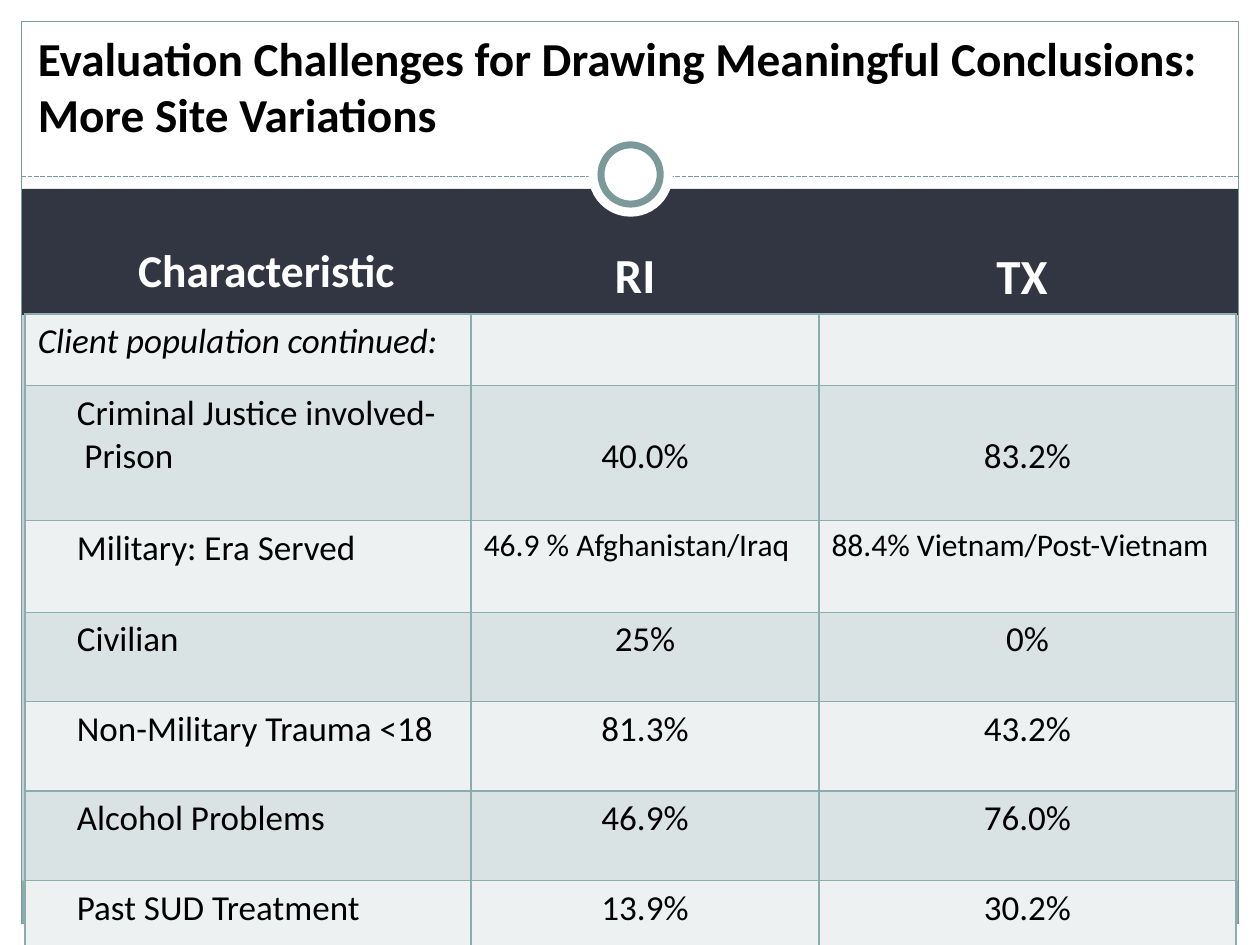
from lxml.etree import SubElement
from pptx import Presentation
from pptx.dml.color import RGBColor
from pptx.enum.dml import MSO_LINE
from pptx.enum.shapes import MSO_CONNECTOR, MSO_SHAPE
from pptx.enum.text import MSO_ANCHOR, MSO_AUTO_SIZE, PP_ALIGN
from pptx.oxml import parse_xml
from pptx.oxml.ns import nsdecls, qn
from pptx.util import Inches, Pt

COLUMNS, ROWS = 100, 75
WHITE, BLACK, DARK = "FFFFFF", "000000", "323643"
SAGE, TEAL, MIST = "7C999A", "8CADAE", "C5D1D7"
BANDS = ("EEF1F2", "DAE3E3")
COLUMN_WIDTHS = (35.4, 27.6, 33.1)
ROW_HEIGHTS = (5.7, 10.7, 7.3, 7.1, 7.1, 7.1, 7.1)
TABLE_ROWS = (
    ("Client population continued:", "", ""),
    ("Criminal Justice involved-\nPrison", "40.0%", "83.2%"),
    ("Military: Era Served", "46.9 % Afghanistan/Iraq", "88.4% Vietnam/Post-Vietnam"),
    ("Civilian", "25%", "0%"),
    ("Non-Military Trauma <18", "81.3%", "43.2%"),
    ("Alcohol Problems", "46.9%", "76.0%"),
    ("Past SUD Treatment", "13.9%", "30.2%"),
)


def grid(units):
    return Inches(units / 10)


def color(value):
    return RGBColor.from_string(value)


def place(sp, box):
    sp.left, sp.top, sp.width, sp.height = map(grid, box)


def add_text(tf, text, size, fill=BLACK, bold=False, italic=False,
             align=PP_ALIGN.LEFT, before=0, indents=(0,)):
    for i, line in enumerate(text.split("\n")):
        p = tf.paragraphs[0] if i == 0 else tf.add_paragraph()
        p.alignment, p.space_before, p.line_spacing = align, Pt(before), 1.0
        if indents[i]:
            p._p.get_or_add_pPr().set("marL", str(Inches(indents[i])))
        r = p.add_run()
        r.text = line
        r.font.name, r.font.size = "Calibri", Pt(size)
        r.font.bold, r.font.italic = bold, italic
        r.font.color.rgb = color(fill)


def add_panel(s, box, fill=None, line=None, weight=0.75, kind=MSO_SHAPE.RECTANGLE):
    sp = s.shapes.add_shape(kind, *map(grid, box))
    sp.shadow.inherit = False
    if fill:
        sp.fill.solid()
        sp.fill.fore_color.rgb = color(fill)
    else:
        sp.fill.background()
    if line:
        sp.line.color.rgb = color(line)
        sp.line.width = Pt(weight)
    else:
        sp.line.fill.background()


def add_rule(s, x, y, width):
    rule = s.shapes.add_connector(MSO_CONNECTOR.STRAIGHT, grid(x), grid(y), grid(x + width), grid(y))
    rule.line.color.rgb = color(SAGE)
    rule.line.width = Pt(0.9)
    rule.line.dash_style = MSO_LINE.SQUARE_DOT
    SubElement(rule._element.spPr, qn("a:effectLst"))


def add_frame(s, box, edge=1.7):
    x, y, w, h = box
    add_panel(s, (x, y, w, 15.8), WHITE)
    add_panel(s, (x, y + h - edge, w, edge), WHITE)
    for left in (x, x + w - edge):
        add_panel(s, (left, y, edge, h), WHITE)
    inner = w - 2 * edge
    add_panel(s, (x + edge, y + 15, inner, 10), DARK)
    add_panel(s, (x + edge, y + h - 3 * edge, inner, 2 * edge), TEAL)
    add_rule(s, x + edge, y + 14, inner)
    add_panel(s, (x + edge, y + edge, inner, h - 2 * edge), line=SAGE)


def add_ring(s, box):
    x, y, w, h = box
    add_panel(s, box, WHITE, kind=MSO_SHAPE.OVAL)
    add_panel(s, (x + 1, y + 1, w - 2, h - 2), WHITE, SAGE, 4, MSO_SHAPE.OVAL)


def add_title(s, box):
    sp = s.shapes.title
    s.shapes._spTree.append(sp._element)
    place(sp, box)
    tf = sp.text_frame
    tf.word_wrap, tf.auto_size = True, MSO_AUTO_SIZE.NONE
    tf.vertical_anchor = MSO_ANCHOR.BOTTOM
    tf.margin_top = tf.margin_bottom = 0
    add_text(tf, "Evaluation Challenges for Drawing Meaningful Conclusions: "
             "More Site Variations", 27, bold=True)


def add_heading(s, sp, box, text, size):
    s.shapes._spTree.append(sp._element)
    place(sp, box)
    tf = sp.text_frame
    tf.word_wrap, tf.auto_size = True, MSO_AUTO_SIZE.NONE
    tf.vertical_anchor = MSO_ANCHOR.MIDDLE
    add_text(tf, text, size, WHITE, bold=True, align=PP_ALIGN.CENTER, before=size / 5)


def add_headings(s, box):
    x, y, w, h = box
    first, second = s.placeholders[1], s.placeholders[3]
    add_heading(s, first, (x, y, 35.7, h - 0.6), "Characteristic", 26)
    add_heading(s, second, (x + 35.7, y, 22.8, h), "RI", 28)
    third = s.shapes.add_textbox(0, 0, 0, 0)
    add_heading(s, third, (x + w - 22.8, y + 0.1, 22.8, h), "TX", 28)


def style_cell(cell, fill):
    cell.fill.solid()
    cell.fill.fore_color.rgb = color(fill)
    tcPr = cell._tc.get_or_add_tcPr()
    for i, side in enumerate(("lnL", "lnR", "lnT", "lnB")):
        tcPr.insert(i, parse_xml(
            f'<a:{side} {nsdecls("a")} w="{Pt(1)}"><a:solidFill>'
            f'<a:srgbClr val="{TEAL}"/></a:solidFill></a:{side}>'))


def add_site_table(s, box):
    table = s.shapes.add_table(len(TABLE_ROWS), len(COLUMN_WIDTHS), *map(grid, box)).table
    table.first_row = table.horz_banding = False
    for column, width in zip(table.columns, COLUMN_WIDTHS):
        column.width = grid(width)
    for i, (values, height) in enumerate(zip(TABLE_ROWS, ROW_HEIGHTS)):
        table.rows[i].height = grid(height)
        for j, text in enumerate(values):
            cell = table.cell(i, j)
            style_cell(cell, BANDS[i % 2])
            if j == 0:
                indents = (0.31, 0.37) if i else (0,)
                add_text(cell.text_frame, text, 20, italic=i == 0, indents=indents)
            elif text:
                wordy = " " in text
                add_text(cell.text_frame, text, 18 if wordy else 20,
                         align=PP_ALIGN.LEFT if wordy else PP_ALIGN.CENTER)
                if "\n" in values[0]:
                    cell.margin_top = grid(3.9)


def main():
    prs = Presentation()
    prs.slide_width, prs.slide_height = grid(COLUMNS), grid(ROWS)
    s = prs.slides.add_slide(prs.slide_layouts.get_by_name("Comparison"))
    s.background.fill.solid()
    s.background.fill.fore_color.rgb = color(MIST)
    for idx in (2, 4):
        s.shapes._spTree.remove(s.placeholders[idx]._element)
    add_frame(s, (0, 0, COLUMNS, ROWS))
    add_ring(s, (46.7, 10.5, 6.7, 6.7))
    add_headings(s, (3.3, 17.7, 89.2, 8))
    add_title(s, (2, 2, 94.7, 9.3))
    add_site_table(s, (2, 24.9, sum(COLUMN_WIDTHS), sum(ROW_HEIGHTS)))
    prs.save("out.pptx")


if __name__ == "__main__":
    main()
